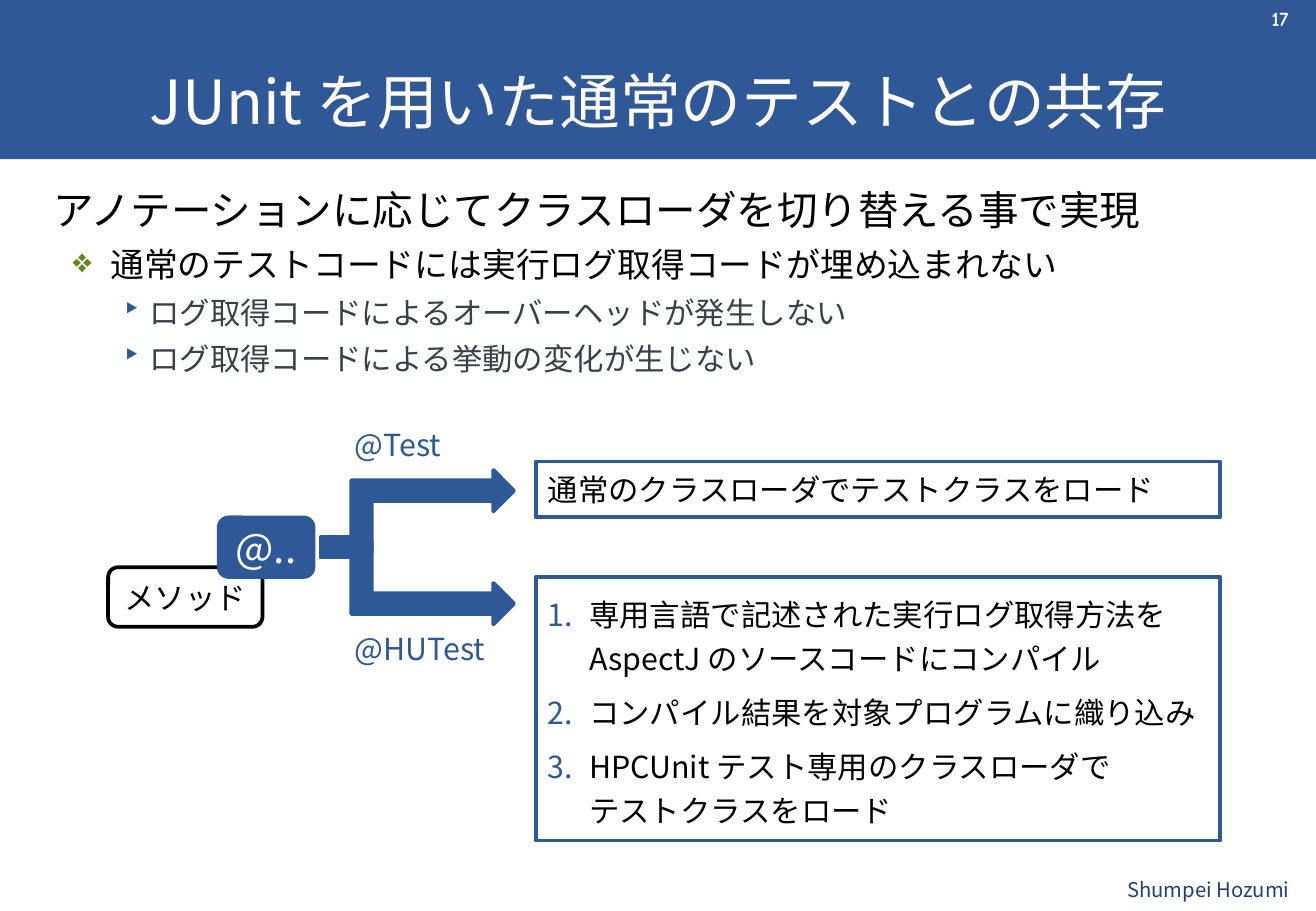
from dataclasses import dataclass

from lxml import etree
from pptx import Presentation
from pptx.dml.color import RGBColor
from pptx.enum.shapes import MSO_SHAPE
from pptx.enum.text import MSO_ANCHOR, PP_ALIGN
from pptx.oxml.ns import qn
from pptx.util import Inches, Pt

RECTANGLE = MSO_SHAPE.RECTANGLE
ROUNDED = MSO_SHAPE.ROUNDED_RECTANGLE
BENT_ARROW = MSO_SHAPE.BENT_UP_ARROW
LEFT, CENTER, RIGHT = PP_ALIGN.LEFT, PP_ALIGN.CENTER, PP_ALIGN.RIGHT
TOP, MIDDLE, BOTTOM = MSO_ANCHOR.TOP, MSO_ANCHOR.MIDDLE, MSO_ANCHOR.BOTTOM


@dataclass(frozen=True)
class Theme:
    font: str = "Noto Sans CJK JP"
    number_font: str = "Comic Neue"
    blue: str = "2F5897"
    navy: str = "234271"
    green: str = "63891F"
    gray: str = "3B4042"
    black: str = "000000"
    white: str = "FFFFFF"
    title: int = 36
    lead: int = 24
    point: int = 20
    text: int = 18
    small: int = 12
    border: float = 2.25


THEME = Theme()

BODY = [
    ("アノテーションに応じてクラスローダを切り替える事で実現", 0),
    ("通常のテストコードには実行ログ取得コードが埋め込まれない", 1),
    ("ログ取得コードによるオーバーヘッドが発生しない", 2),
    ("ログ取得コードによる挙動の変化が生じない", 2),
]
LEVELS = [
    (THEME.lead, THEME.black, None),
    (THEME.point, THEME.black, (0.47, 0.31, THEME.green, "❖")),
    (THEME.text, THEME.gray, (0.79, 0.22, THEME.blue, "‣")),
]
STEPS = [
    "専用言語で記述された実行ログ取得方法を\vAspectJ のソースコードにコンパイル",
    "コンパイル結果を対象プログラムに織り込み",
    "HPCUnit テスト専用のクラスローダで\vテストクラスをロード",
]


def format_runs(paragraph, size, color, font=THEME.font, bold=False):
    for run in paragraph.runs:
        run.font.size = Pt(size)
        run.font.bold = bold
        run.font.name = font
        run.font.color.rgb = RGBColor.from_string(color)
        east_asian = etree.SubElement(run.font._element, qn("a:ea"))
        east_asian.set("typeface", font)


def set_bullet(paragraph, indent, hanging, color, character=None):
    properties = paragraph._p.get_or_add_pPr()
    properties.set("marL", str(Inches(indent)))
    properties.set("indent", str(-Inches(hanging)))
    bullet_color = etree.SubElement(properties, qn("a:buClr"))
    etree.SubElement(bullet_color, qn("a:srgbClr")).set("val", color)
    if character:
        etree.SubElement(properties, qn("a:buChar")).set("char", character)
    else:
        etree.SubElement(properties, qn("a:buAutoNum")).set("type", "arabicPeriod")


def set_text(shape, text, size, color, align=LEFT, anchor=MIDDLE, **font):
    frame = shape.text_frame
    frame.word_wrap = True
    frame.vertical_anchor = anchor
    frame.text = text
    frame.paragraphs[0].alignment = align
    format_runs(frame.paragraphs[0], size, color, **font)


def add_label(slide, box, *text, **options):
    label = slide.shapes.add_textbox(*map(Inches, box))
    set_text(label, *text, **options)
    return label


def add_box(shapes, kind, box, fill=None, line=None):
    shape = shapes.add_shape(kind, *map(Inches, box))
    shape.shadow.inherit = False
    if fill:
        shape.fill.solid()
        shape.fill.fore_color.rgb = RGBColor.from_string(fill)
    else:
        shape.fill.background()
    if line:
        shape.line.color.rgb = RGBColor.from_string(line)
        shape.line.width = Pt(THEME.border)
    else:
        shape.line.fill.background()
    return shape


def add_header(slide):
    add_box(slide.shapes, RECTANGLE, (0, 0, 10.83, 1.31), THEME.blue)
    number = add_label(slide, (10.21, -0.05, 0.67, 0.4), "17", THEME.small, THEME.white,
                       align=CENTER, font=THEME.number_font, bold=True)
    number.text_frame.margin_left = Inches(0.03)
    number.text_frame.margin_right = Inches(0.05)
    add_label(slide, (0.34, 0.39, 10.15, 0.78), "JUnit を用いた通常のテストとの共存",
              THEME.title, THEME.white, align=CENTER, anchor=BOTTOM)


def add_body(slide):
    frame = slide.shapes.add_textbox(*map(Inches, (0.34, 1.43, 10.36, 1.9))).text_frame
    frame.word_wrap = True
    frame.vertical_anchor = TOP
    for index, (text, level) in enumerate(BODY):
        size, color, bullet = LEVELS[level]
        paragraph = frame.paragraphs[0] if index == 0 else frame.add_paragraph()
        paragraph.text = text
        paragraph.level = level
        paragraph.line_spacing = Pt(size * 1.32)
        paragraph.space_before = Pt(size * 0.2)
        format_runs(paragraph, size, color)
        if bullet:
            set_bullet(paragraph, *bullet)


def add_method(slide):
    method = add_box(slide.shapes, ROUNDED, (0.89, 4.67, 1.27, 0.49), THEME.white, THEME.black)
    set_text(method, "メソッド", THEME.text, THEME.black, align=CENTER)
    annotation = add_box(slide.shapes, ROUNDED, (1.8, 4.26, 0.78, 0.49), THEME.blue, THEME.blue)
    set_text(annotation, "@..", THEME.lead, THEME.white, align=CENTER)


def add_branch(slide):
    branch = slide.shapes.add_group_shape()
    add_box(branch.shapes, RECTANGLE, (2.64, 4.42, 0.4, 0.17), THEME.blue, THEME.blue)
    for top, rotation in ((4.13, 90), (3.54, 270)):
        arrow = add_box(branch.shapes, BENT_ARROW, (3.22, top, 0.68, 1.34),
                        THEME.blue, THEME.blue)
        arrow.rotation = rotation
        if rotation == 270:
            arrow._element.spPr.find(qn("a:xfrm")).set("flipV", "1")
    for text, top, width in (("@Test", 3.46, 0.97), ("@HUTest", 5.14, 1.37)):
        label = add_label(slide, (2.82, top, width, 0.4), text, THEME.text, THEME.blue)
        label.text_frame.word_wrap = False


def add_loaders(slide):
    normal = add_box(slide.shapes, RECTANGLE, (4.41, 3.8, 5.63, 0.46), line=THEME.blue)
    set_text(normal, "通常のクラスローダでテストクラスをロード", THEME.text, THEME.black)
    special = add_box(slide.shapes, RECTANGLE, (4.41, 4.75, 5.63, 2.17), line=THEME.blue)
    frame = special.text_frame
    frame.word_wrap = True
    frame.vertical_anchor = MIDDLE
    for index, text in enumerate(STEPS):
        paragraph = frame.paragraphs[0] if index == 0 else frame.add_paragraph()
        paragraph.text = text
        paragraph.alignment = LEFT
        paragraph.line_spacing = Pt(26)
        paragraph.space_before = Pt(6)
        format_runs(paragraph, THEME.text, THEME.black)
        set_bullet(paragraph, 0.34, 0.34, THEME.blue)


def main():
    presentation = Presentation()
    presentation.slide_width = Inches(10.83)
    presentation.slide_height = Inches(7.5)
    slide = presentation.slides.add_slide(presentation.slide_layouts[6])
    add_header(slide)
    add_label(slide, (9.03, 7.14, 1.68, 0.36), "Shumpei Hozumi",
              THEME.small, THEME.navy, align=RIGHT)
    add_body(slide)
    add_method(slide)
    add_branch(slide)
    add_loaders(slide)
    presentation.save("out.pptx")


if __name__ == "__main__":
    main()
